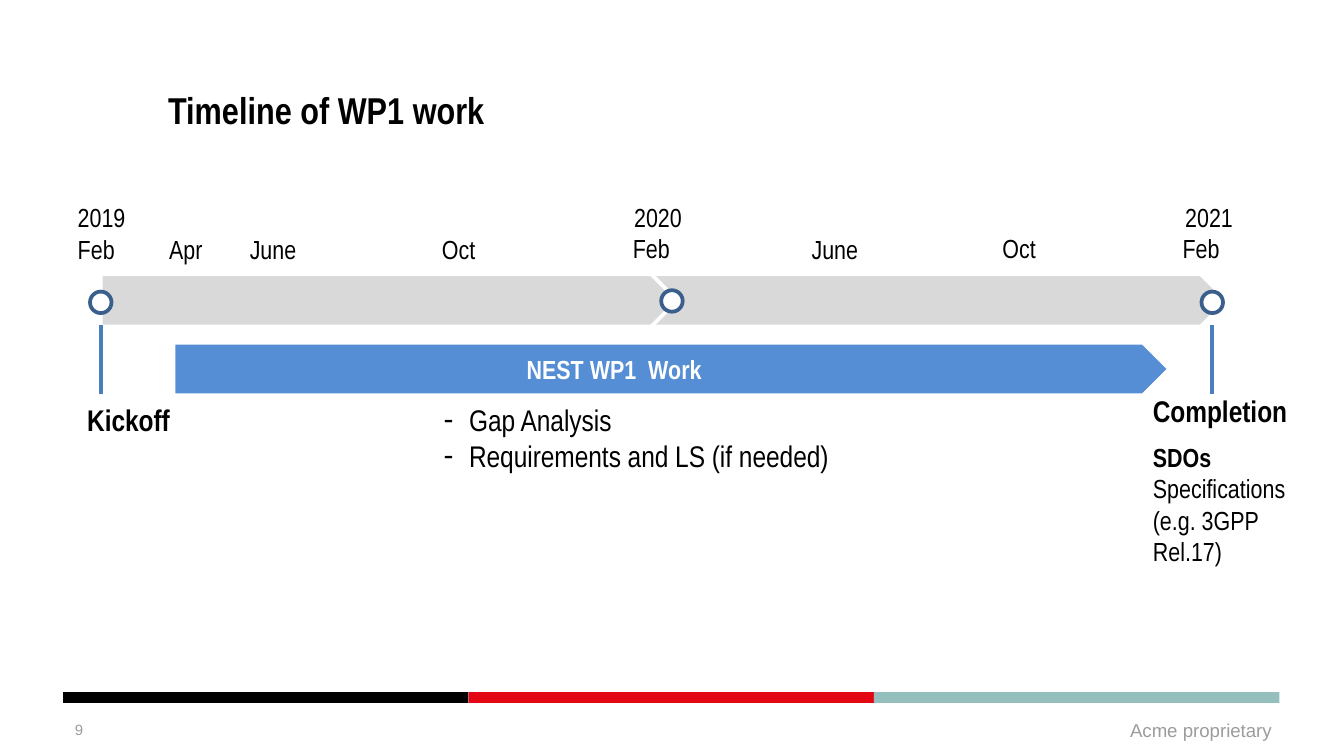
from lxml import etree
from pptx import Presentation
from pptx.dml.color import RGBColor
from pptx.enum.shapes import MSO_CONNECTOR, MSO_SHAPE
from pptx.enum.text import MSO_ANCHOR, MSO_AUTO_SIZE, PP_ALIGN
from pptx.oxml.ns import qn
from pptx.util import Inches, Pt

RECTANGLE, PENTAGON, OVAL = MSO_SHAPE.RECTANGLE, MSO_SHAPE.PENTAGON, MSO_SHAPE.OVAL
STRAIGHT = MSO_CONNECTOR.STRAIGHT
TOP, MIDDLE = MSO_ANCHOR.TOP, MSO_ANCHOR.MIDDLE
LEFT, RIGHT = PP_ALIGN.LEFT, PP_ALIGN.RIGHT
NO_FIT = MSO_AUTO_SIZE.NONE

COLORS = {
    "black": "000000", "white": "FFFFFF", "red": "E30613", "teal": "94BFBD",
    "footer": "9C9C9C", "year": "D9D9D9", "work": "558ED5",
    "ring": "3A5F8C", "marker": "4B7EBC",
}
NARROW = "Arial Narrow"
MONTH_WIDTHS = {"Feb": 0.48, "Apr": 0.45, "June": 0.55, "Oct": 0.45}
MONTHS = [
    ("Feb", 0, 0.24), ("Apr", 0.68, 0.24), ("June", 1.28, 0.24),
    ("Oct", 2.71, 0.24), ("Feb", 4.13, 0.23), ("June", 5.46, 0.24),
    ("Oct", 6.88, 0.23), ("Feb", 8.22, 0.23),
]
YEARS = [("2019", 0), ("2020", 4.14), ("2021", 8.24)]


def color(name):
    """Return the named colour."""
    return RGBColor.from_string(COLORS[name])


def place(shape, left, top, width, height):
    """Move and size a shape, in inches."""
    shape.left, shape.top = Inches(left), Inches(top)
    shape.width, shape.height = Inches(width), Inches(height)


def style(para, size, tone="black", bold=False, font=NARROW):
    """Format every run of a paragraph."""
    for span in para.runs:
        span.font.name, span.font.size = font, Pt(size)
        span.font.bold = bold
        span.font.color.rgb = color(tone)


def add_text(page, text, left, top, width, height, size=14, wrap=False, **look):
    """Add a text box with one paragraph per line and return its frame."""
    box = page.shapes.add_textbox(
        Inches(left), Inches(top), Inches(width), Inches(height))
    frame = box.text_frame
    frame.text = text
    frame.word_wrap = wrap
    for para in frame.paragraphs:
        style(para, size, **look)
    return frame


def add_block(page, kind, left, top, width, height, fill, line=None):
    """Add a flat shape with a solid fill and an optional outline."""
    block = page.shapes.add_shape(
        kind, Inches(left), Inches(top), Inches(width), Inches(height))
    block.shadow.inherit = False
    block.fill.solid()
    block.fill.fore_color.rgb = color(fill)
    if line:
        block.line.color.rgb = color(line)
        block.line.width = Pt(2)
    else:
        block.line.fill.background()


def add_marker(page, x, top, bottom):
    """Add a vertical marker line."""
    marker = page.shapes.add_connector(
        STRAIGHT, Inches(x), Inches(bottom), Inches(x), Inches(top))
    marker.line.color.rgb = color("marker")
    marker.line.width = Pt(2)
    etree.SubElement(marker._element.spPr, qn("a:effectLst"))


def add_title(page, left, top, width, height):
    """Place the slide title."""
    title = page.shapes.title
    place(title, left, top, width, height)
    frame = title.text_frame
    frame.text = "Timeline of WP1 work"
    frame.vertical_anchor, frame.auto_size = TOP, NO_FIT
    frame.paragraphs[0].alignment = LEFT
    style(frame.paragraphs[0], 20, bold=True)


def add_footer(page, left, top, width):
    """Draw the three-colour rule, the page number and the footer."""
    part = width / 3
    for index, fill in enumerate(("black", "red", "teal")):
        add_block(page, RECTANGLE, left + index * part, top, part, 0.08, fill)
    number = add_text(page, "9", left - 0.01, top + 0.13, 2.33, 0.3, 8,
                      wrap=True, tone="footer", font="Arial")
    owner = add_text(page, "Acme proprietary", left + 6.76, top + 0.13, 2.33, 0.3,
                     10, wrap=True, tone="footer", font="Arial")
    number.vertical_anchor = owner.vertical_anchor = MIDDLE
    owner.paragraphs[0].alignment = RIGHT


def add_timeline(page, left, top):
    """Draw dates, year bars, the work bar and the milestones."""
    for year, offset in YEARS:
        add_text(page, year, left + offset, top, 0.56, 0.34)
    for month, offset, drop in MONTHS:
        add_text(page, month, left + offset, top + drop, MONTH_WIDTHS[month], 0.34)
    for offset, width in ((4.22, 4.43), (0.27, 4.29)):
        add_block(page, PENTAGON, left + offset, top + 0.59, width, 0.39,
                  "year", "white")
    add_block(page, PENTAGON, left + 0.81, top + 1.1, 7.41, 0.39, "work", "white")
    add_text(page, "NEST WP1  Work", left + 3.34, top + 1.13, 1.52, 0.34,
             tone="white", bold=True)
    for offset in (0.27, 8.54):
        add_marker(page, left + offset, top + 0.97, top + 1.48)
    for offset, drop in ((0.19, 0.72), (4.44, 0.71), (8.46, 0.72)):
        add_block(page, OVAL, left + offset, top + drop, 0.16, 0.16, "white", "ring")


def add_tasks(page, left, top, width, height):
    """Place the dashed list of work items."""
    body = page.placeholders[1]
    place(body, left, top, width, height)
    frame = body.text_frame
    frame.text = "Gap Analysis\nRequirements and LS (if needed)"
    frame.auto_size = NO_FIT
    indent = Inches(0.19)
    for para in frame.paragraphs:
        properties = para._p.get_or_add_pPr()
        properties.set("marL", str(indent))
        properties.set("indent", str(-indent))
        etree.SubElement(properties, qn("a:buFont"), typeface="Arial")
        etree.SubElement(properties, qn("a:buChar"), char="-")
        para.space_before = Pt(0)
        style(para, 16)


def add_milestone_notes(page, left, top):
    """Write the notes below the first and last milestones."""
    add_text(page, "Kickoff", left, top + 0.07, 1.28, 0.37, 16, wrap=True, bold=True)
    notes = add_text(
        page, "Completion\nSDOs\nSpecifications\n(e.g. 3GPP Rel.17)",
        left + 7.93, top, 1.44, 1.65, wrap=True)
    heading, bodies = notes.paragraphs[:2]
    style(heading, 16, bold=True)
    style(bodies, 14, bold=True)
    bodies.space_before = Pt(7)


def main():
    """Build and save the deck."""
    deck = Presentation()
    deck.slide_width = Inches(10)
    deck.slide_height = deck.slide_width * 9 // 16
    page = deck.slides.add_slide(deck.slide_layouts[1])
    add_footer(page, 0.47, 5.15, 9.05)
    add_timeline(page, 0.48, 1.45)
    add_milestone_notes(page, 0.55, 2.87)
    add_tasks(page, 3.2, 2.94, 3.58, 0.64)
    add_title(page, 1.15, 0.6, 8.77, 0.35)
    deck.save("out.pptx")


if __name__ == "__main__":
    main()
